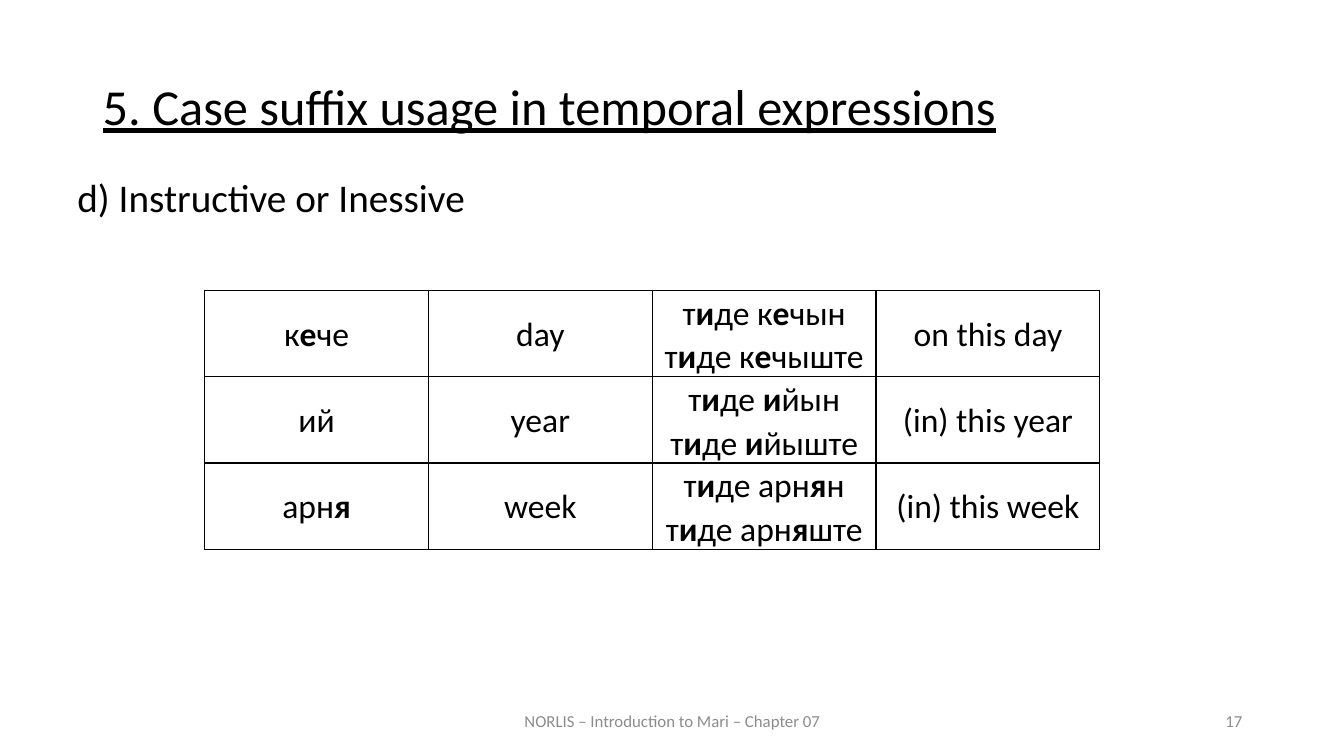
from pptx import Presentation
from pptx.util import Inches, Pt
from pptx.dml.color import RGBColor
from pptx.enum.text import PP_ALIGN, MSO_ANCHOR
from pptx.oxml import parse_xml
from pptx.oxml.ns import nsdecls

INK = {"text": "000000", "foot": "8C8C8C", "line": "000000"}

deck = Presentation()
deck.slide_width = Inches(13.33)
deck.slide_height = Inches(7.5)
slide = deck.slides.add_slide(deck.slide_layouts[6])


def add_runs(para, text, size, color, align):
    para.alignment = align
    for i, part in enumerate(text.split("*")):
        if part:
            run = para.add_run()
            run.text = part
            run.font.name = "Calibri"
            run.font.size = Pt(size)
            run.font.bold = i % 2 == 1
            run.font.color.rgb = RGBColor.from_string(INK[color])


def add_label(text, box, size, color, align, anchor):
    frame = slide.shapes.add_textbox(*[Inches(v) for v in box]).text_frame
    frame.word_wrap = True
    frame.vertical_anchor = anchor
    add_runs(frame.paragraphs[0], text, size, color, align)
    return frame.paragraphs[0]


add_label("NORLIS – Introduction to Mari – Chapter 07", (4.42, 6.95, 4.5, 0.4),
          12, "foot", PP_ALIGN.CENTER, MSO_ANCHOR.MIDDLE)
add_label("17", (9.42, 6.95, 3, 0.4), 12, "foot", PP_ALIGN.RIGHT, MSO_ANCHOR.MIDDLE)
title = add_label("5. Case suffix usage in temporal expressions", (0.92, 0.76, 11.5, 0.83),
                  36, "text", PP_ALIGN.JUSTIFY, MSO_ANCHOR.TOP)
title.line_spacing = 0.9
title.space_before = Pt(12)
title.runs[0].font.underline = True
add_label("d) Instructive or Inessive", (0.67, 1.67, 8.24, 0.57),
          28, "text", PP_ALIGN.LEFT, MSO_ANCHOR.TOP)

ROWS = [
    ["к*е*че", "day", "т*и*де к*е*чын\nт*и*де к*е*чыште", "on this day"],
    ["ий", "year", "т*и*де *и*йын\nт*и*де *и*йыште", "(in) this year"],
    ["арн*я*", "week", "т*и*де арн*я*н\nт*и*де арн*я*ште", "(in) this week"],
]
table = slide.shapes.add_table(len(ROWS), len(ROWS[0]), Inches(2.03), Inches(2.88),
                               Inches(8.88), Inches(2.55)).table
table.first_row = False
table.horz_banding = False
for col in table.columns:
    col.width = Inches(2.22)
for r, row in enumerate(ROWS):
    table.rows[r].height = Inches(0.85)
    for c, text in enumerate(row):
        cell = table.cell(r, c)
        cell.margin_left = cell.margin_right = Inches(0.07)
        cell.margin_top = cell.margin_bottom = 0
        cell.vertical_anchor = MSO_ANCHOR.MIDDLE
        for i, line in enumerate(text.split("\n")):
            para = cell.text_frame.add_paragraph() if i else cell.text_frame.paragraphs[0]
            para.line_spacing = 1.07
            add_runs(para, line, 24, "text", PP_ALIGN.CENTER)
        props = cell._tc.get_or_add_tcPr()
        for side in ("lnL", "lnR", "lnT", "lnB"):
            props.append(parse_xml(
                f'<a:{side} {nsdecls("a")} w="12700"><a:solidFill>'
                f'<a:srgbClr val="{INK["line"]}"/></a:solidFill></a:{side}>'))
        cell.fill.background()

deck.save("out.pptx")
